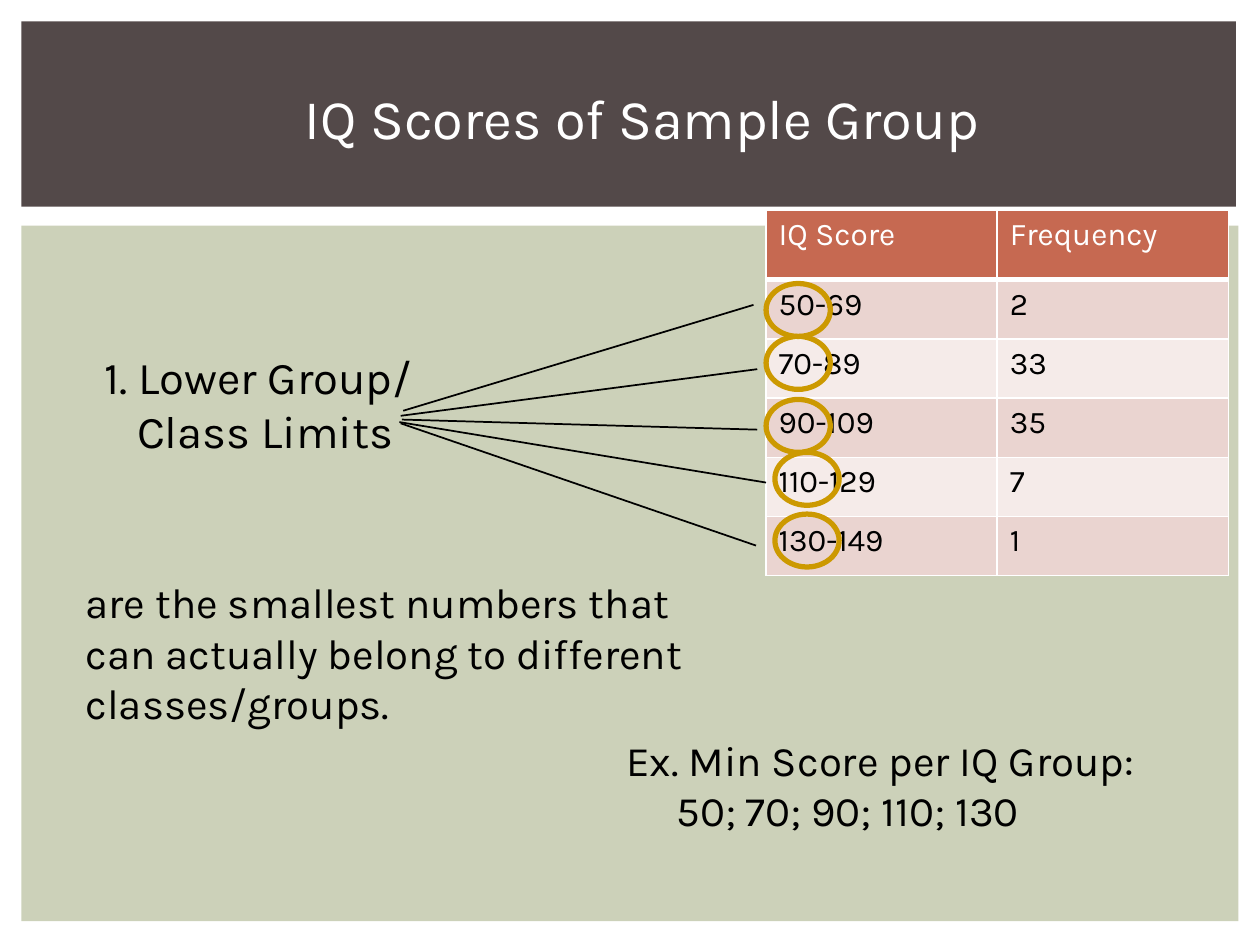
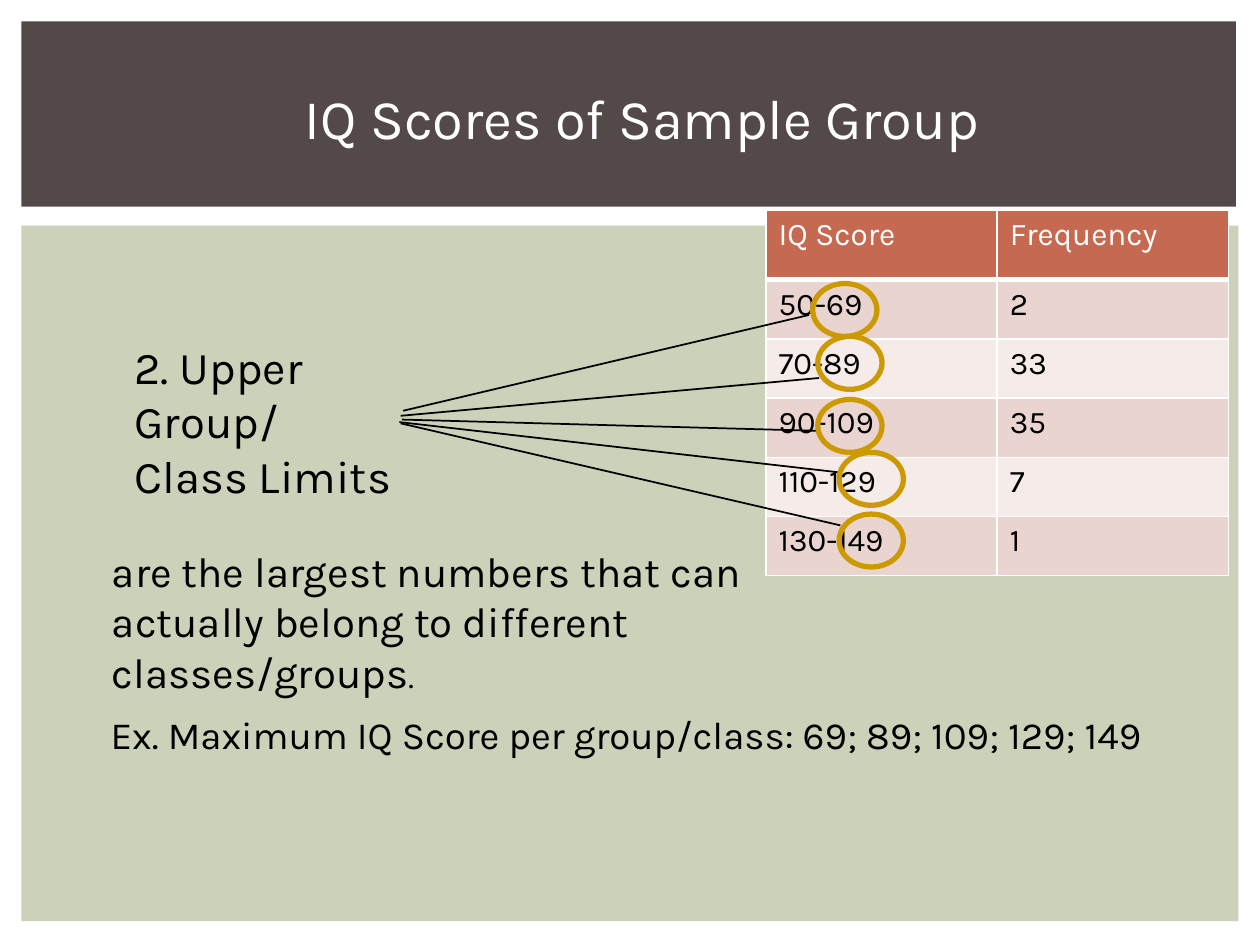
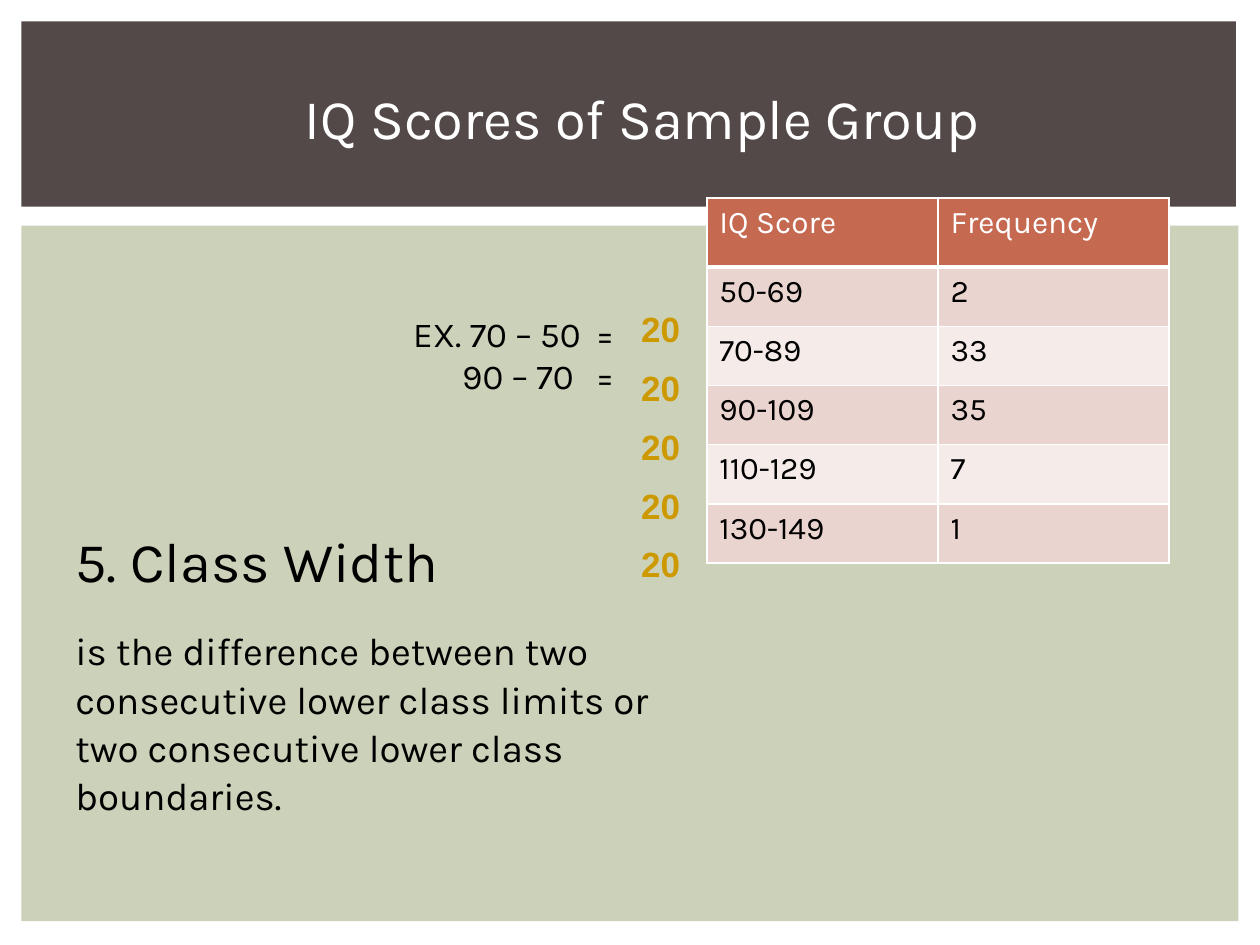
from lxml.etree import SubElement
from pptx import Presentation
from pptx.dml.color import RGBColor
from pptx.enum.shapes import MSO_CONNECTOR, MSO_SHAPE
from pptx.enum.text import MSO_ANCHOR, MSO_AUTO_SIZE, PP_ALIGN
from pptx.oxml import parse_xml
from pptx.oxml.ns import nsdecls, qn
from pptx.util import Inches, Pt

WHITE, BLACK = "FFFFFF", "000000"
PANEL, BAND, GOLD = "CCD1B9", "534949", "CC9900"
HEADER, ROW_FILLS = "C66951", ("EAD4D0", "F5EBE9")
FONT = "Karla"
TITLE = "IQ Scores of Sample Group"

SCORES = [
    ("IQ Score", "Frequency"),
    ("50-69", "2"),
    ("70-89", "33"),
    ("90-109", "35"),
    ("110-129", "7"),
    ("130-149", "1"),
]
CIRCLE_TOPS = [2.25, 2.67, 3.17, 3.59, 4.08]
RAY_STARTS = [(3.2, 3.26), (3.18, 3.3), (3.19, 3.33), (3.17, 3.35), (3.18, 3.36)]
LOWER_CIRCLES = [6.08, 6.08, 6.08, 6.15, 6.15]
LOWER_RAY_ENDS = [(5.98, 2.42), (6.01, 2.93), (6.01, 3.41), (6.08, 3.83), (6, 4.33)]
UPPER_CIRCLES = [6.45, 6.49, 6.49, 6.66, 6.66]
UPPER_RAY_ENDS = [(6.42, 2.5), (6.5, 3), (6.5, 3.42), (6.67, 3.75), (6.67, 4.17)]


def rgb(value):
    return RGBColor.from_string(value)


def box(*lengths):
    return [Inches(length) for length in lengths]


class Deck:
    def __init__(self):
        self.prs = Presentation()
        self.prs.slide_width, self.prs.slide_height = box(10, 7.5)
        self.layout = self.prs.slide_layouts[5]
        self.slide = None
        self.prepare_layout()

    def prepare_layout(self):
        """Leave only the title on the layout and place it."""
        title, *others = self.layout.placeholders
        for placeholder in others:
            placeholder.element.getparent().remove(placeholder.element)
        title.left, title.top, title.width, title.height = box(0.4, 0.23, 9.4, 1.4)

    def add_bands(self):
        """Draw the shared bands and move them behind the layout's title."""
        bands = [
            self.shape(MSO_SHAPE.RECTANGLE, (0.17, 1.79, 9.66, 5.52), fill=PANEL),
            self.shape(MSO_SHAPE.RECTANGLE, (0.17, 0.17, 9.64, 1.47), fill=BAND),
        ]
        for position, band in enumerate(bands, start=2):
            self.layout.shapes.element.insert(position, band.element)

    def new_slide(self):
        first = self.slide is None
        self.slide = self.prs.slides.add_slide(self.layout)
        if first:
            self.add_bands()
        frame = self.slide.shapes.title.text_frame
        frame.vertical_anchor = MSO_ANCHOR.MIDDLE
        frame.paragraphs[0].alignment = PP_ALIGN.CENTER
        self.run(frame.paragraphs[0], TITLE, 32, WHITE)

    def run(self, paragraph, words, size, color=BLACK, font=FONT, bold=False):
        run = paragraph.add_run()
        run.text = words
        run.font.size = Pt(size)
        run.font.name = font
        run.font.bold = bold
        run.font.color.rgb = rgb(color)

    def shape(self, kind, place, fill=None, line=None):
        shape = self.slide.shapes.add_shape(kind, *box(*place))
        shape.shadow.inherit = False
        if fill:
            shape.fill.solid()
            shape.fill.fore_color.rgb = rgb(fill)
        else:
            shape.fill.background()
        if line:
            shape.line.color.rgb = rgb(line)
            shape.line.width = Pt(3)
        else:
            shape.line.fill.background()
        return shape

    def text(self, place, lines, size, wrap=True, spacing=None, **style):
        """Add a text box with one paragraph per line and return its frame."""
        frame = self.slide.shapes.add_textbox(*box(*place)).text_frame
        frame.word_wrap = wrap
        frame.auto_size = MSO_AUTO_SIZE.SHAPE_TO_FIT_TEXT
        for index, line in enumerate(lines):
            paragraph = frame.add_paragraph() if index else frame.paragraphs[0]
            paragraph.line_spacing = spacing
            self.run(paragraph, line, size, **style)
        return frame

    def indent(self, paragraph, length):
        paragraph._p.get_or_add_pPr().set("marL", str(Inches(length)))

    def tab_stops(self, paragraph, stops):
        tab_list = SubElement(paragraph._p.get_or_add_pPr(), qn("a:tabLst"))
        for stop in stops:
            SubElement(tab_list, qn("a:tab"), pos=str(Inches(stop)), algn="l")

    def ray(self, start, end):
        ray = self.slide.shapes.add_connector(
            MSO_CONNECTOR.STRAIGHT, *box(*start, *end))
        ray.line.color.rgb = rgb(BLACK)
        ray.line.width = Pt(1)
        SubElement(ray.element.spPr, qn("a:effectLst"))

    def borders(self, cell, bottom):
        properties = cell._tc.get_or_add_tcPr()
        widths = {"lnL": 1, "lnR": 1, "lnT": 1, "lnB": bottom}
        for position, (side, width) in enumerate(widths.items()):
            properties.insert(position, parse_xml(
                f'<a:{side} {nsdecls("a")} w="{Pt(width)}"><a:solidFill>'
                f'<a:srgbClr val="{WHITE}"/></a:solidFill></a:{side}>'))

    def score_table(self, left, top):
        table = self.slide.shapes.add_table(
            len(SCORES), 2, *box(left, top, 3.67, 2.89)).table
        table.first_row = table.horz_banding = False
        for index, values in enumerate(SCORES):
            is_header = index == 0
            table.rows[index].height = Inches(0.55 if is_header else 0.47)
            for cell, value in zip(table.rows[index].cells, values):
                cell.fill.solid()
                cell.fill.fore_color.rgb = rgb(
                    HEADER if is_header else ROW_FILLS[(index - 1) % 2])
                self.borders(cell, bottom=3 if is_header else 1)
                self.run(cell.text_frame.paragraphs[0], value, 18,
                         WHITE if is_header else BLACK)

    def mark_limits(self, circle_lefts, ray_ends):
        """Circle one limit in each class and link it to the term."""
        for start, end in zip(RAY_STARTS, ray_ends):
            self.ray(start, end)
        for left, top in zip(circle_lefts, CIRCLE_TOPS):
            self.shape(MSO_SHAPE.OVAL, (left, top, 0.51, 0.42), line=GOLD)


def lower_limits(deck):
    deck.new_slide()
    deck.score_table(6.08, 1.67)
    term = deck.text((0.73, 2.72, 3.33, 1.44), ["1. Lower Group/", "Class Limits"], 26)
    deck.indent(term.paragraphs[1], 0.26)
    deck.mark_limits(LOWER_CIRCLES, LOWER_RAY_ENDS)
    deck.text((0.58, 4.53, 5.42, 1.31),
              ["are the smallest numbers that can actually belong to "
               "different classes/groups."], 24)
    example = deck.text((4.87, 5.48, 4.71, 1.51),
                        ["Ex. Min Score per IQ Group:", "50; 70; 90; 110; 130"], 24)
    example.margin_top = Inches(0.35)
    deck.indent(example.paragraphs[1], 0.4)


def upper_limits(deck):
    deck.new_slide()
    deck.score_table(6.08, 1.67)
    term = deck.text((0.97, 2.64, 2.72, 1.44), ["2. Upper Group/", "Class Limits"], 26)
    term.margin_right = Inches(0.5)
    deck.mark_limits(UPPER_CIRCLES, UPPER_RAY_ENDS)
    definition = deck.text((0.79, 4.28, 5.27, 1.72),
                           ["are the largest numbers that can actually belong to "
                            "different classes/groups"], 24)
    deck.run(definition.paragraphs[0], ".", 18)
    deck.text((0.78, 5.59, 8.43, 0.84),
              ["Ex. Maximum IQ Score per group/class: 69; 89; 109; 129; 149"],
              22, wrap=False)


def class_width(deck):
    deck.new_slide()
    deck.score_table(5.61, 1.57)
    deck.text((0.5, 4.13, 3.41, 0.64), ["5. Class Width"], 32)
    deck.text((0.5, 4.91, 5, 1.26),
              ["is the difference between two consecutive lower class limits or "
               "two consecutive lower class boundaries."], 22, spacing=1.05)
    deck.text((4.99, 2.26, 1.26, 2.37), ["20"] * 5, 20, spacing=1.4,
              color=GOLD, font="Arial", bold=True)
    example = deck.text((3.18, 2.43, 1.92, 0.77),
                        ["EX. 70 – 50\t=", "\t90 – 70\t="], 20)
    for paragraph in example.paragraphs:
        deck.tab_stops(paragraph, (0.39, 1.45))


def main():
    deck = Deck()
    lower_limits(deck)
    upper_limits(deck)
    class_width(deck)
    deck.prs.save("out.pptx")


if __name__ == "__main__":
    main()
